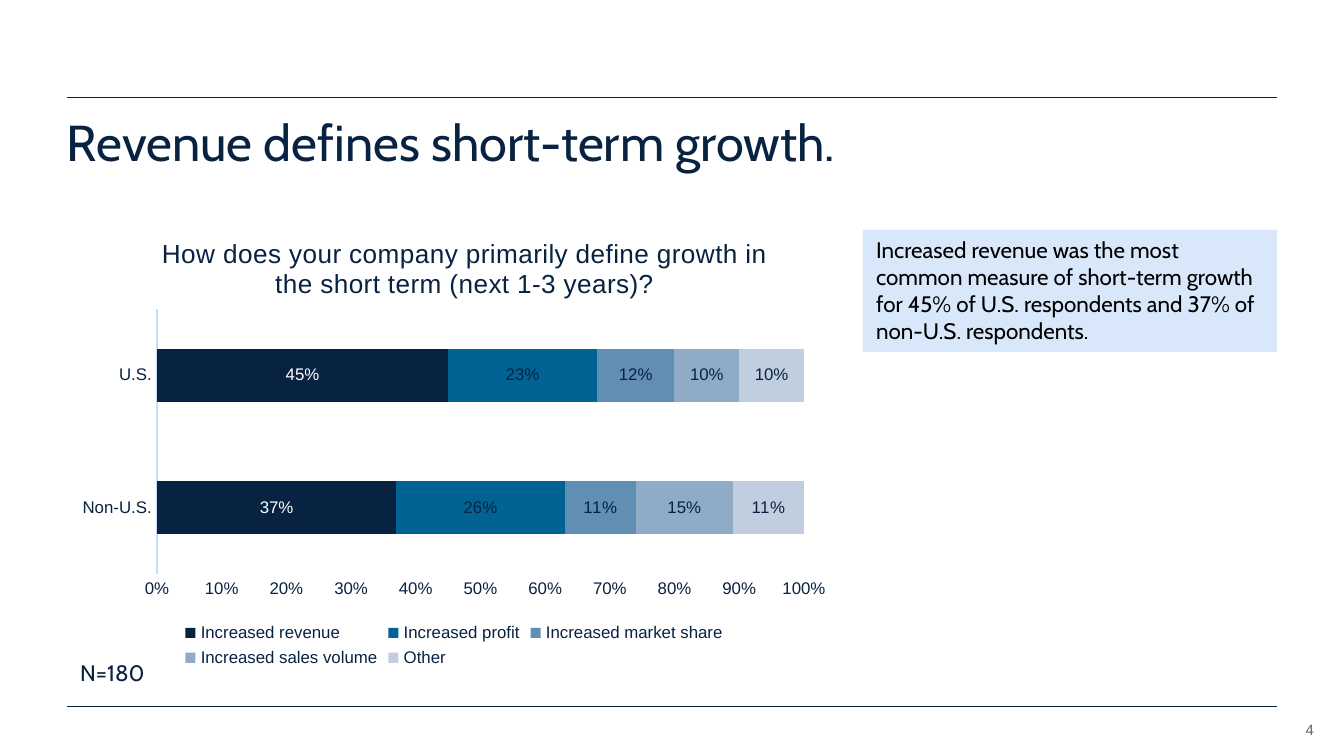
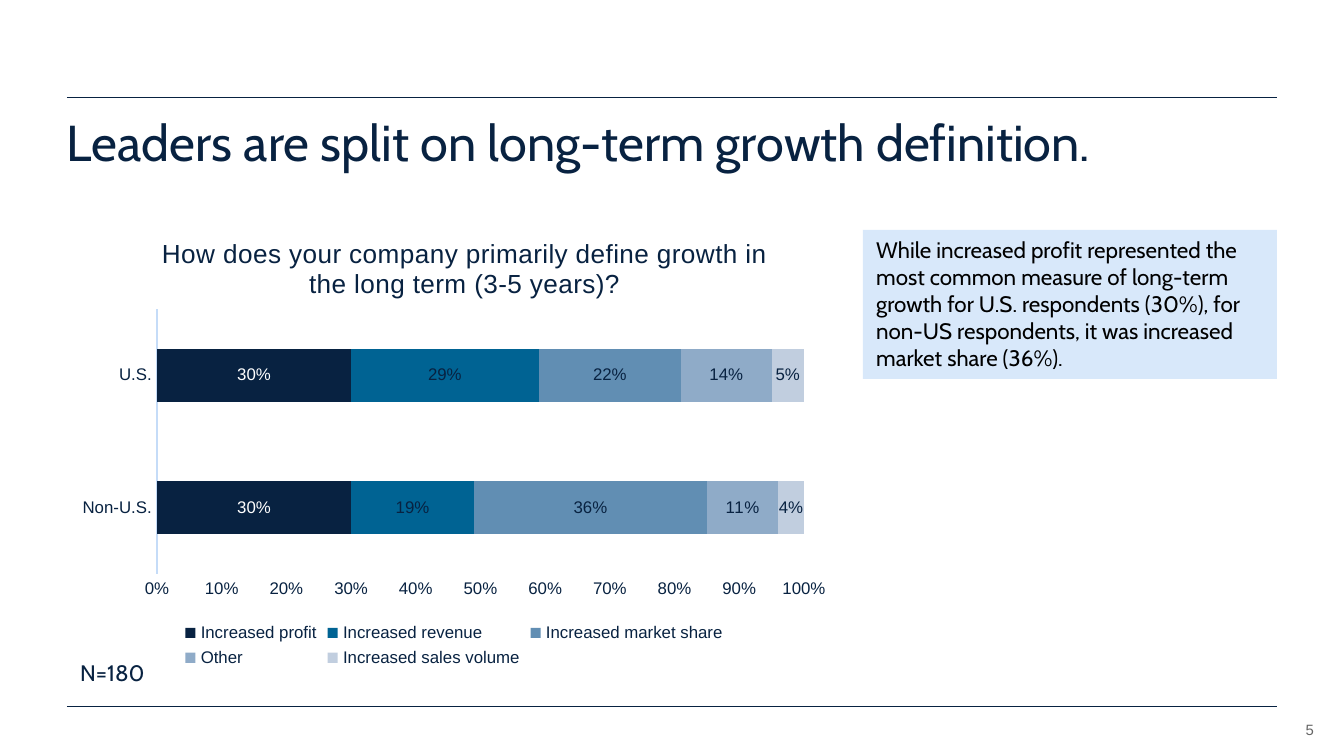
from lxml.etree import SubElement
from pptx import Presentation
from pptx.chart.data import CategoryChartData
from pptx.dml.color import RGBColor
from pptx.enum.chart import XL_CHART_TYPE, XL_LABEL_POSITION, XL_LEGEND_POSITION, XL_TICK_MARK
from pptx.enum.shapes import MSO_CONNECTOR, MSO_SHAPE
from pptx.enum.text import MSO_ANCHOR, MSO_AUTO_SIZE, PP_ALIGN
from pptx.oxml.ns import qn
from pptx.util import Pt

SCALE = 914400 / 134.4
LEFT, RIGHT = 67, 1277
NAVY, PALE, BLACK, WHITE, GREY, AXIS = "082241", "D8E8FA", "000000", "FFFFFF", "666666", "C5DCF8"
SERIES_COLORS = [NAVY, "006393", "618EB3", "8FABC8", "C1CEDF"]
CHART_BOX = (LEFT, 208, 774, 465)
PLOT_BOX = (157, 309, 647, 265)
TITLE_BOX = (157, 232)

SLIDES = [
    {
        "number": "4",
        "title": "Revenue defines short-term growth.",
        "callout": "Increased revenue was the most common measure of short-term growth "
                   "for 45% of U.S. respondents and 37% of non-U.S. respondents.",
        "callout_height": 122,
        "question": "How does your company primarily define growth in the short term (next 1-3 years)?",
        "series": {
            "Increased revenue": (0.37, 0.45),
            "Increased profit": (0.26, 0.23),
            "Increased market share": (0.11, 0.12),
            "Increased sales volume": (0.15, 0.10),
            "Other": (0.11, 0.10),
        },
    },
    {
        "number": "5",
        "title": "Leaders are split on long-term growth definition.",
        "callout": "While increased profit represented the most common measure of long-term growth "
                   "for U.S. respondents (30%), for non-US respondents, it was increased market share (36%).",
        "callout_height": 149,
        "question": "How does your company primarily define growth in the long term (3-5 years)?",
        "series": {
            "Increased profit": (0.30, 0.30),
            "Increased revenue": (0.19, 0.29),
            "Increased market share": (0.36, 0.22),
            "Other": (0.11, 0.14),
            "Increased sales volume": (0.04, 0.05),
        },
    },
]


def px(*lengths):
    """Turn pixel lengths into EMU."""
    return [round(n * SCALE) for n in lengths]


def rgb(value):
    """Turn a hex string into a colour."""
    return RGBColor.from_string(value)


def set_all(obj, **values):
    """Set several attributes on one object."""
    for name, value in values.items():
        setattr(obj, name, value)


def style_font(font, size, color, name="Arial"):
    """Give a font its face, size and colour."""
    set_all(font, name=name, size=Pt(size), bold=False)
    font.color.rgb = rgb(color)


def write(sp, text, size, color, name="Cabin", align=PP_ALIGN.LEFT,
          anchor=MSO_ANCHOR.TOP, inset=None, spacing=None):
    """Write one formatted paragraph into a shape."""
    tf = sp.text_frame
    set_all(tf, word_wrap=True, auto_size=MSO_AUTO_SIZE.NONE, vertical_anchor=anchor)
    if inset is not None:
        for side in ("left", "top", "right", "bottom"):
            setattr(tf, f"margin_{side}", inset)
    p = tf.paragraphs[0]
    set_all(p, alignment=align, line_spacing=spacing)
    r = p.add_run()
    r.text = text
    style_font(r.font, size, color, name)


def add_rule(s, y):
    """Draw a thin line across the content width."""
    line = s.shapes.add_connector(MSO_CONNECTOR.STRAIGHT, *px(LEFT, y, RIGHT, y))
    line.line.color.rgb = rgb(NAVY)
    line.line.width = Pt(0.5)
    SubElement(line._element.spPr, qn("a:effectLst"))


def add_frame(s, title, number):
    """Add the rules, page number and title."""
    for y in (97, 707):
        add_rule(s, y)
    write(s.shapes.add_textbox(*px(1251, 715, 63, 24)), number, 8, GREY, "Arial",
          PP_ALIGN.RIGHT, MSO_ANCHOR.BOTTOM, 0)
    sp = s.shapes.title
    set_all(sp, **dict(zip(("left", "top", "width", "height"), px(LEFT, 118, RIGHT - LEFT, 74))))
    write(sp, title, 27, NAVY, inset=0, spacing=0.9)


def add_callout(s, text, height):
    """Add the pale box that states the finding."""
    sp = s.shapes.add_shape(MSO_SHAPE.RECTANGLE, *px(863, 230, RIGHT - 863, height))
    sp.shadow.inherit = False
    sp.fill.solid()
    sp.fill.fore_color.rgb = rgb(PALE)
    sp.line.fill.background()
    write(sp, text, 12, BLACK)


def place(parent, index, x, y, *size, **modes):
    """Fix the place of a chart part, given in slide pixels."""
    for old in parent.findall(qn("c:layout")):
        parent.remove(old)
    layout = parent.makeelement(qn("c:layout"), {})
    parent.insert(index, layout)
    manual = SubElement(layout, qn("c:manualLayout"))
    left, top, width, height = CHART_BOX
    values = {**modes, "xMode": "edge", "yMode": "edge",
              "x": (x - left) / width, "y": (y - top) / height}
    if size:
        values.update(w=size[0] / width, h=size[1] / height)
    for tag, value in values.items():
        SubElement(manual, qn(f"c:{tag}"), val=str(value))


def style_axis(axis):
    """Remove ticks and gridlines and set the label font."""
    set_all(axis, has_major_gridlines=False, major_tick_mark=XL_TICK_MARK.NONE,
            minor_tick_mark=XL_TICK_MARK.NONE)
    style_font(axis.tick_labels.font, 9, NAVY)


def style_series(ser, color, label_color):
    """Colour a series and label its values."""
    ser.format.fill.solid()
    ser.format.fill.fore_color.rgb = rgb(color)
    labels = ser.data_labels
    set_all(labels, show_value=True, position=XL_LABEL_POSITION.CENTER,
            number_format="0%", number_format_is_linked=False)
    style_font(labels.font, 9, label_color)


def add_growth_chart(s, question, series):
    """Add the stacked bars of growth definitions."""
    data = CategoryChartData(number_format="0%")
    data.categories = ["Non-U.S.", "U.S."]
    for name, values in series.items():
        data.add_series(name, values)
    chart = s.shapes.add_chart(XL_CHART_TYPE.BAR_STACKED_100, *px(*CHART_BOX), data).chart
    style_font(chart.font, 10, NAVY)

    set_all(chart, has_title=True, has_legend=True)
    title = chart.chart_title
    title.include_in_layout = False
    r = title.text_frame.paragraphs[0].add_run()
    r.text = question
    style_font(r.font, 14, NAVY)
    r.font._element.set("spc", "10")
    place(title._element, 1, *TITLE_BOX)

    set_all(chart.legend, position=XL_LEGEND_POSITION.BOTTOM, include_in_layout=False)
    style_font(chart.legend.font, 9, NAVY)

    for axis in (chart.category_axis, chart.value_axis):
        style_axis(axis)
    line = chart.category_axis.format.line
    line.color.rgb = rgb(AXIS)
    line.width = Pt(0.75)
    set_all(chart.value_axis, minimum_scale=0, maximum_scale=1, major_unit=0.1)
    chart.value_axis.format.line.fill.background()
    set_all(chart.value_axis.tick_labels, number_format="0%", number_format_is_linked=False)

    plot = chart.plots[0]
    set_all(plot, gap_width=150, overlap=100, vary_by_categories=False)
    for ser, color in zip(plot.series, SERIES_COLORS):
        style_series(ser, color, WHITE if color == NAVY else NAVY)
    place(plot._element.getparent(), 0, *PLOT_BOX, layoutTarget="inner")


def add_growth_slide(prs, content):
    """Build one slide from its content."""
    s = prs.slides.add_slide(prs.slide_layouts[5])
    add_frame(s, content["title"], content["number"])
    add_callout(s, content["callout"], content["callout_height"])
    write(s.shapes.add_textbox(*px(LEFT, 653, 118, 40)), "N=180", 12, NAVY)
    add_growth_chart(s, content["question"], content["series"])


def main():
    """Build and save the presentation."""
    prs = Presentation()
    prs.slide_width, prs.slide_height = px(1344, 756)
    for content in SLIDES:
        add_growth_slide(prs, content)
    prs.save("out.pptx")


if __name__ == "__main__":
    main()
